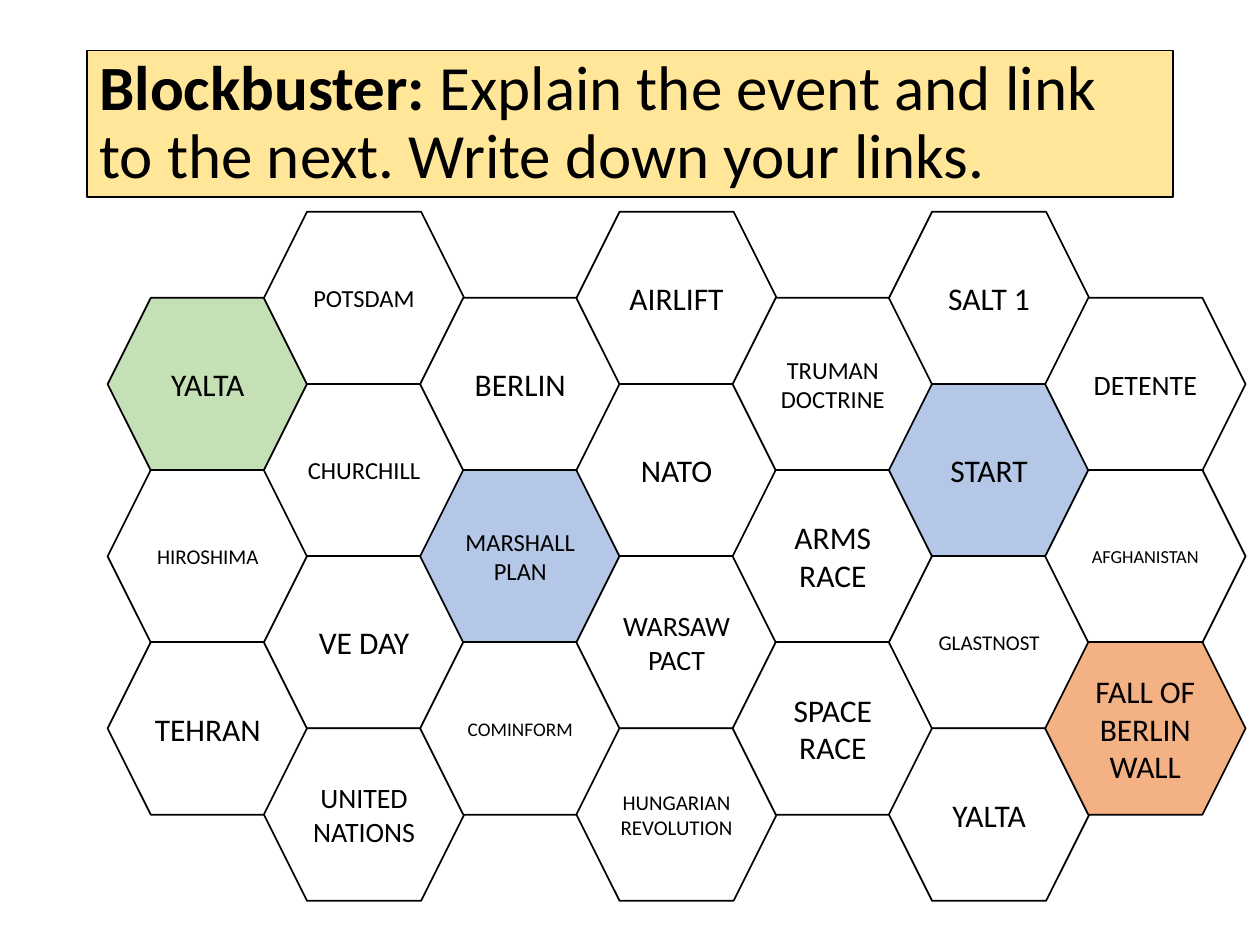
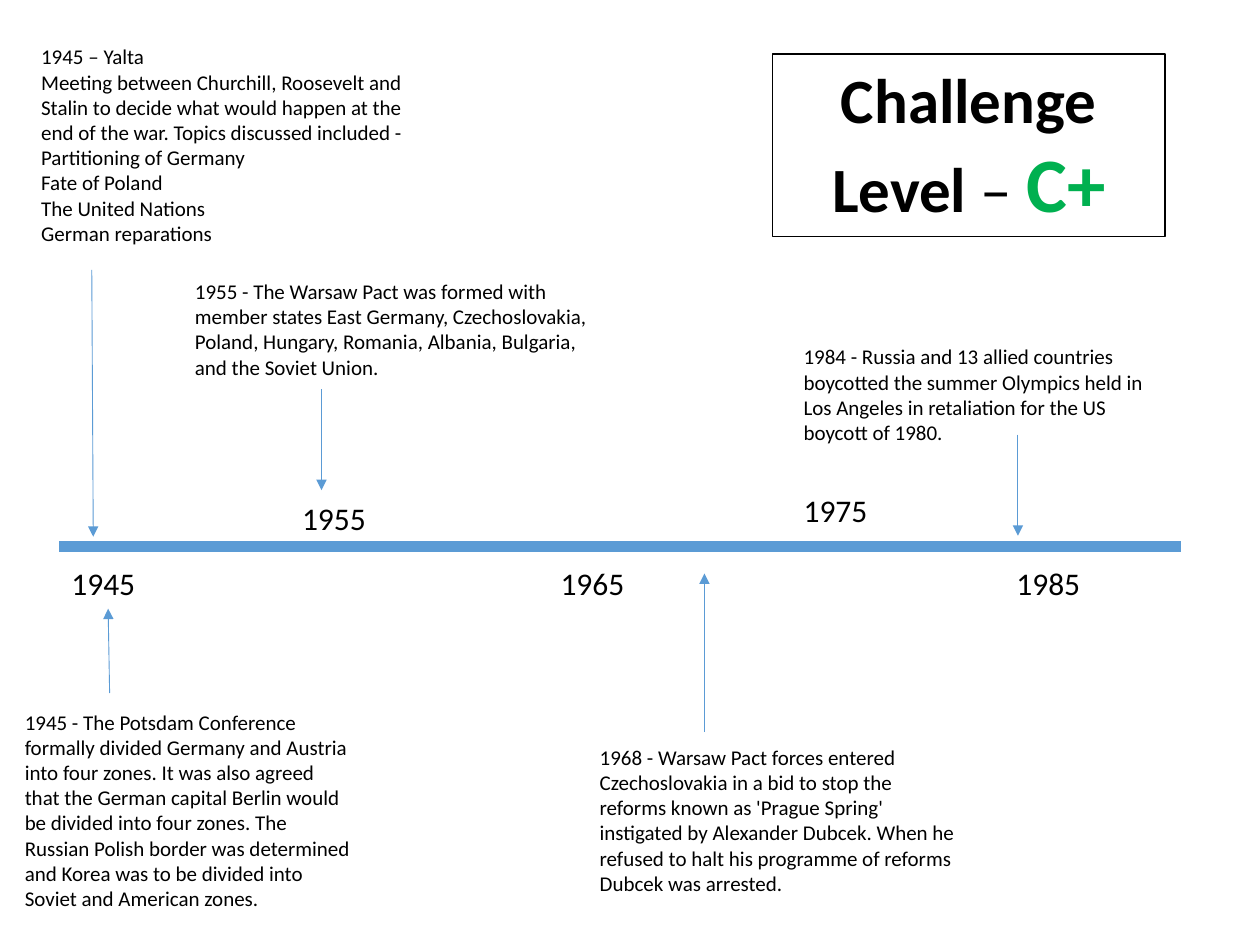
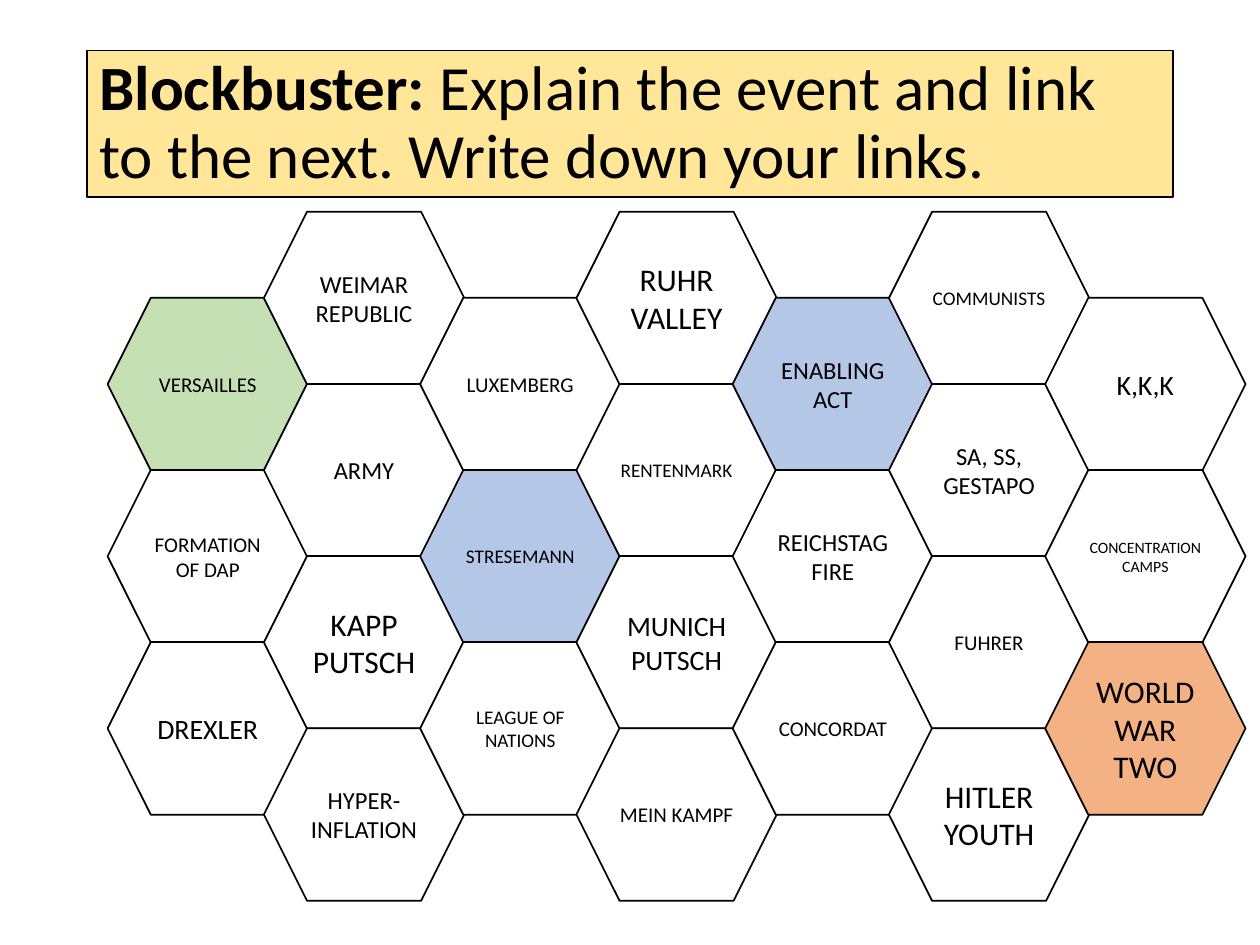
from dataclasses import dataclass

from lxml import etree
from pptx import Presentation
from pptx.dml.color import RGBColor
from pptx.enum import shapes, text
from pptx.oxml import ns
from pptx.util import Cm, Pt


@dataclass(frozen=True)
class Theme:
    font: str = "Calibri"
    ink: str = "000000"
    paper: str = "FFFFFF"
    banner: str = "FFE699"
    start: str = "C5E0B4"
    bonus: str = "B4C7E7"
    finish: str = "F4B183"
    timeline: str = "5B9BD5"
    grade: str = "00B050"
    title_size: float = 36
    grade_size: float = 44
    year_size: float = 18
    note_size: float = 12
    outline: float = 1
    timeline_width: float = 6
    arrow_width: float = 0.5


THEME = Theme()

# Titles: (text, bold, size, colour)
BLOCKBUSTER_TITLE = [
    ("Blockbuster: ", True, THEME.title_size, THEME.ink),
    ("Explain the event and link to the next. Write down your links.",
     False, THEME.title_size, THEME.ink),
]
CHALLENGE_TITLE = [
    ("Challenge Level ", True, THEME.title_size, THEME.ink),
    ("– ", False, THEME.title_size, THEME.ink),
    ("C+", True, THEME.grade_size, THEME.grade),
]

# Hexagon boards, column by column: (text, size[, fill])
COLD_WAR_BOARD = [
    [("YALTA", 18, THEME.start), ("HIROSHIMA", 12), ("TEHRAN", 18)],
    [("POTSDAM", 14), ("CHURCHILL", 14), ("VE DAY", 18), ("UNITED NATIONS", 16)],
    [("BERLIN", 18), ("MARSHALL PLAN", 14, THEME.bonus), ("COMINFORM", 11)],
    [("AIRLIFT", 18), ("NATO", 18), ("WARSAW PACT", 16), ("HUNGARIAN REVOLUTION", 12)],
    [("TRUMAN DOCTRINE", 14), ("ARMS RACE", 18), ("SPACE RACE", 18)],
    [("SALT 1", 18), ("START", 18, THEME.bonus), ("GLASTNOST", 12), ("YALTA", 18)],
    [("DETENTE", 16), ("AFGHANISTAN", 10.5), ("FALL OF BERLIN WALL", 18, THEME.finish)],
]
GERMANY_BOARD = [
    [("VERSAILLES", 12, THEME.start), ("FORMATION OF DAP", 12), ("DREXLER", 16)],
    [("WEIMAR REPUBLIC", 14), ("ARMY", 14), ("KAPP PUTSCH", 18), ("HYPER-INFLATION", 14)],
    [("LUXEMBERG", 12), ("STRESEMANN", 11, THEME.bonus), ("LEAGUE OF NATIONS", 11)],
    [("RUHR VALLEY", 18), ("RENTENMARK", 11), ("MUNICH PUTSCH", 16), ("MEIN KAMPF", 12)],
    [("ENABLING ACT", 14, THEME.bonus), ("REICHSTAG FIRE", 14), ("CONCORDAT", 12)],
    [("COMMUNISTS", 11), ("SA, SS, GESTAPO", 14), ("FUHRER", 12), ("HITLER YOUTH", 18)],
    [("K,K,K", 16), ("CONCENTRATION\vCAMPS", 9), ("WORLD WAR TWO", 18, THEME.finish)],
]

# Timeline, in centimetres: years are (text, left, top)
YEARS = [("1945", 1.19, 11.25), ("1955", 5.84, 9.93), ("1965", 11.05, 11.25),
         ("1975", 15.95, 9.78), ("1985", 20.24, 11.25)]

# Events: (paragraphs, text box, arrow start and end)
EVENTS = [
    (["1945 – Yalta",
      "Meeting between Churchill, Roosevelt and Stalin to decide what would happen "
      "at the end of the war. Topics discussed included -",
      "Partitioning of Germany", "Fate of Poland", "The United Nations",
      "German reparations"],
     (0.58, 0.76, 8.46, 4.88), (1.85, 5.44, 1.88, 10.82)),
    (["1945 - The Potsdam Conference formally divided Germany and Austria into four "
      "zones. It was also agreed that the German capital Berlin would be divided into "
      "four zones. The Russian Polish border was determined and Korea was to be "
      "divided into Soviet and American zones."],
     (0.25, 14.17, 7.09, 4.88), (2.21, 13.97, 2.18, 12.27)),
    (["1955 - The Warsaw Pact was formed with member states East Germany, "
      "Czechoslovakia, Poland, Hungary, Romania, Albania, Bulgaria, and the Soviet "
      "Union."],
     (3.68, 5.49, 8.43, 2.31), (6.48, 7.85, 6.48, 9.88)),
    (["1968 - Warsaw Pact forces entered Czechoslovakia in a bid to stop the reforms "
      "known as 'Prague Spring' instigated by Alexander Dubcek. When he refused to "
      "halt his programme of reforms Dubcek was arrested."],
     (11.84, 14.88, 7.72, 3.33), (14.2, 14.76, 14.2, 11.56)),
    (["1984 - Russia and 13 allied countries boycotted the summer Olympics held in "
      "Los Angeles in retaliation for the US boycott of 1980."],
     (15.95, 6.81, 7.95, 2.31), (20.52, 8.76, 20.52, 10.8)),
]


# Shared helpers
def cm(values):
    return [Cm(value) for value in values]


def rgb(colour):
    return RGBColor.from_string(colour)


def style_font(font, size, colour=THEME.ink, bold=False):
    font.name, font.size, font.bold = THEME.font, Pt(size), bold
    font.color.rgb = rgb(colour)


def style_box(shape, fill):
    shape.fill.solid()
    shape.fill.fore_color.rgb = rgb(fill)
    shape.line.color.rgb = rgb(THEME.ink)
    shape.line.width = Pt(THEME.outline)


def add_titled_slide(presentation, runs, box, fill, alignment, anchor, spacing):
    slide = presentation.slides.add_slide(presentation.slide_layouts[5])
    title = slide.shapes.title
    title.left, title.top, title.width, title.height = cm(box)
    style_box(title, fill)
    frame = title.text_frame
    frame.auto_size = text.MSO_AUTO_SIZE.NONE
    frame.vertical_anchor = anchor
    paragraph = frame.paragraphs[0]
    paragraph.alignment, paragraph.line_spacing = alignment, spacing
    for words, bold, size, colour in runs:
        run = paragraph.add_run()
        run.text = words
        style_font(run.font, size, colour, bold)
    return slide


# Hexagon board
def add_hexagon(slide, left, top, words, size, fill=THEME.paper):
    hexagon = slide.shapes.add_shape(
        shapes.MSO_SHAPE.HEXAGON, *cm((left, top, 4.04, 3.48)))
    hexagon.shadow.inherit = False
    style_box(hexagon, fill)
    frame = hexagon.text_frame
    frame.text = words
    frame.vertical_anchor = text.MSO_ANCHOR.MIDDLE
    paragraph = frame.paragraphs[0]
    paragraph.alignment = text.PP_ALIGN.CENTER
    style_font(paragraph.font, size)


def build_board(presentation, board):
    slide = add_titled_slide(
        presentation, BLOCKBUSTER_TITLE, (1.75, 1.02, 21.89, 2.95), THEME.banner,
        text.PP_ALIGN.LEFT, text.MSO_ANCHOR.MIDDLE, 0.9)
    column_step, row_step = 3.15, 3.47
    for column, cells in enumerate(board):
        first_top = 4.27 if column % 2 else 4.27 + row_step / 2
        for row, cell in enumerate(cells):
            add_hexagon(slide, 2.17 + column * column_step,
                        first_top + row * row_step, *cell)


# Timeline
def add_line(slide, ends, width, arrow=False):
    line = slide.shapes.add_connector(shapes.MSO_CONNECTOR.STRAIGHT, *cm(ends))
    line.line.color.rgb = rgb(THEME.timeline)
    line.line.width = Pt(width)
    properties = line.element.spPr
    if arrow:
        outline = properties.find(ns.qn("a:ln"))
        etree.SubElement(outline, ns.qn("a:tailEnd"), type="triangle")
    etree.SubElement(properties, ns.qn("a:effectLst"))


def add_note(slide, paragraphs, box, size):
    frame = slide.shapes.add_textbox(*cm(box)).text_frame
    frame.word_wrap = True
    frame.auto_size = text.MSO_AUTO_SIZE.SHAPE_TO_FIT_TEXT
    frame.text = "\n".join(paragraphs)
    for paragraph in frame.paragraphs:
        style_font(paragraph.font, size)


def build_timeline(presentation):
    slide = add_titled_slide(
        presentation, CHALLENGE_TITLE, (15.57, 1.09, 7.92, 3.68), THEME.paper,
        text.PP_ALIGN.CENTER, text.MSO_ANCHOR.TOP, 1.0)
    add_line(slide, (23.8, 11.02, 1.19, 11.02), THEME.timeline_width)
    for year, left, top in YEARS:
        add_note(slide, [year], (left, top, 2.13, 1.02), THEME.year_size)
    for paragraphs, box, arrow in EVENTS:
        add_note(slide, paragraphs, box, THEME.note_size)
        add_line(slide, arrow, THEME.arrow_width, arrow=True)


def main():
    presentation = Presentation()
    presentation.slide_width, presentation.slide_height = Cm(25.4), Cm(19.05)
    build_board(presentation, COLD_WAR_BOARD)
    build_timeline(presentation)
    build_board(presentation, GERMANY_BOARD)
    presentation.save("out.pptx")


if __name__ == "__main__":
    main()
